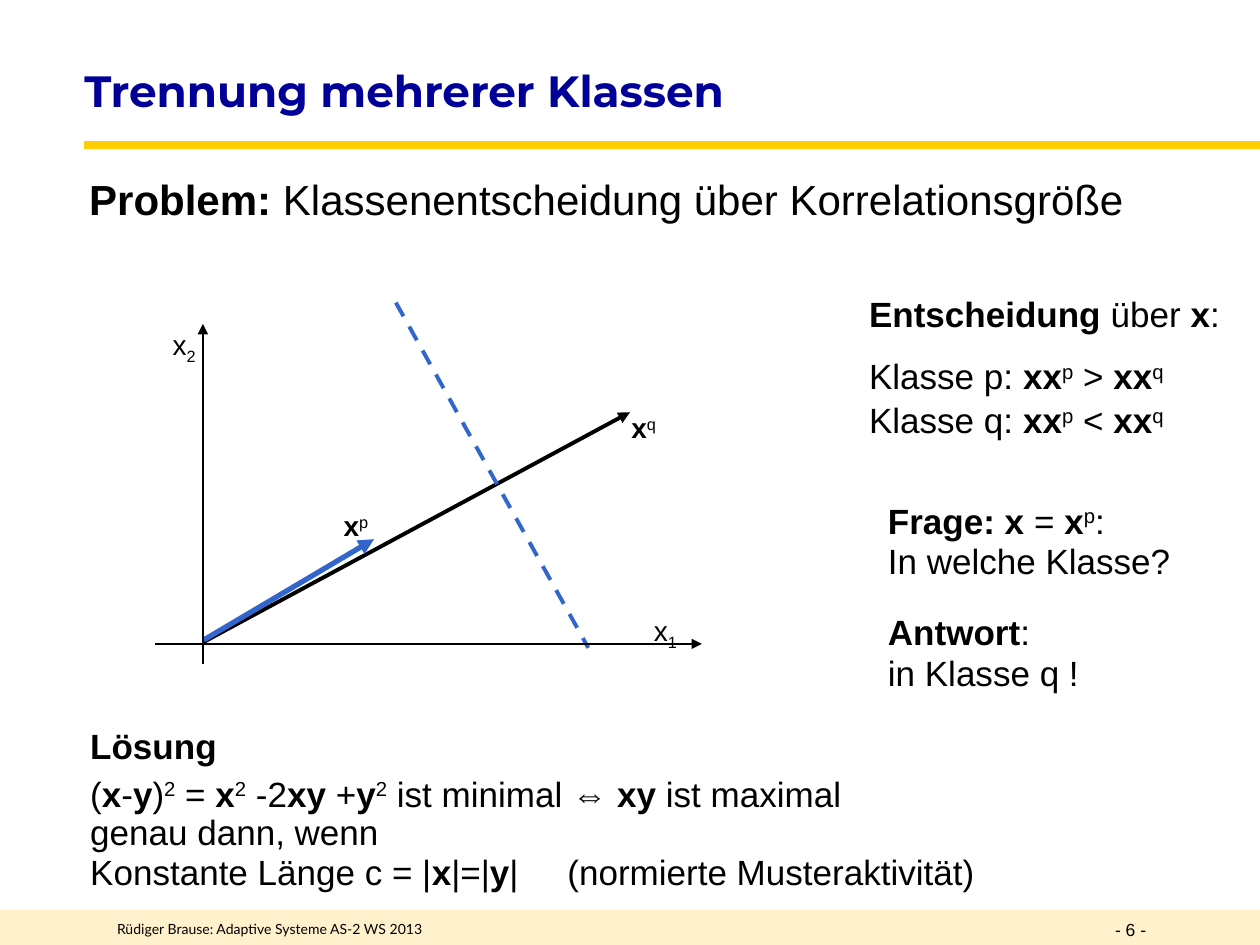
from dataclasses import dataclass

from pptx import Presentation
from pptx import util as u
from pptx.dml.color import RGBColor
from pptx.enum import dml, shapes, text
from pptx.oxml import ns, xmlchemy as xml


@dataclass(frozen=True)
class Theme:
    black: str = "000000"
    navy: str = "000099"
    blue: str = "3366CC"
    gold: str = "FFCC00"
    cream: str = "FFE499"
    sans: str = "Arial"
    head: str = "Montserrat"
    foot: str = "Lato"
    title: int = 25
    lead: int = 24
    body: int = 20
    label: int = 16
    page: int = 10
    note: int = 8


T = Theme()
SHIFT = {"^": "30000", "_": "-25000"}


def color(code):
    return RGBColor.from_string(code)


def child(node, tag, **attrs):
    item = xml.OxmlElement(tag)
    for key, value in attrs.items():
        item.set(key, value)
    node.append(item)
    return item


def split(line):
    bold, shift, part = False, None, ""
    for char in line + "*":
        if char not in "*^_":
            part += char
            continue
        if part:
            yield part, bold, shift
        part = ""
        if char == "*":
            bold = not bold
        else:
            shift = None if shift else SHIFT[char]


def write(slide, lines, box, size=T.body, font=T.sans, ink=T.black,
          pad=(0.25, 0.13), gaps=(), before=11.5, tab=None,
          anchor=text.MSO_ANCHOR.TOP):
    frame = slide.shapes.add_textbox(*map(u.Cm, box)).text_frame
    frame.word_wrap = True
    frame.vertical_anchor = anchor
    frame.margin_left, frame.margin_top = map(u.Cm, pad)
    frame.margin_right, frame.margin_bottom = map(u.Cm, pad)
    for i, line in enumerate(lines):
        para = frame.paragraphs[0] if i == 0 else frame.add_paragraph()
        if i:
            para.space_before = u.Pt(before)
        if gaps:
            para.line_spacing = gaps[i]
        if tab and "\t" in line:
            stops = child(para._p.get_or_add_pPr(), "a:tabLst")
            child(stops, "a:tab", pos=str(u.Cm(tab)), algn="l")
        for part, bold, shift in split(line):
            run = para.add_run()
            run.text = part
            run.font.name, run.font.size = font, u.Pt(size)
            run.font.bold = bold
            run.font.color.rgb = color(ink)
            if shift:
                run._r.get_or_add_rPr().set("baseline", shift)


def draw(slide, start, end, ink=T.black, width=0.75, arrow=False, dash=False):
    line = slide.shapes.add_connector(
        shapes.MSO_CONNECTOR.STRAIGHT, *map(u.Cm, start + end))
    line.line.color.rgb = color(ink)
    line.line.width = u.Pt(width)
    if dash:
        line.line.dash_style = dml.MSO_LINE.DASH
    if arrow:
        child(line.line._get_or_add_ln(), "a:tailEnd", type="triangle")
    child(line._element.spPr, "a:effectLst")


def band(slide, box, ink, alpha):
    bar = slide.shapes.add_shape(
        shapes.MSO_SHAPE.RECTANGLE, *map(u.Cm, box))
    bar.shadow.inherit = False
    bar.fill.solid()
    bar.fill.fore_color.rgb = color(ink)
    bar.line.fill.background()
    tint = bar._element.spPr.find(".//" + ns.qn("a:srgbClr"))
    child(tint, "a:alpha", val=str(alpha * 1000))


def frame(slide):
    band(slide, (0, 18.34, 25.4, 0.71), T.cream, 50)
    draw(slide, (1.7, 2.92), (25.4, 2.92), T.gold, 4.5)
    write(slide, ["Rüdiger Brause: Adaptive Systeme AS-2 WS 2013"],
          (2.11, 18.42, 13.77, 0.64), size=T.note, font=T.foot)
    write(slide, ["- 6 -"], (22.23, 18.39, 1.91, 0.66), size=T.page)
    write(slide, ["*Trennung mehrerer Klassen*"], (1.7, 1.12, 18.39, 1.4),
          size=T.title, font=T.head, ink=T.navy, pad=(0, 0.13),
          anchor=text.MSO_ANCHOR.MIDDLE)


def plot(slide):
    draw(slide, (4.09, 12.95), (12.7, 8.31), width=2.25, arrow=True)
    draw(slide, (4.11, 12.9), (7.54, 10.87), T.blue, 3, arrow=True)
    draw(slide, (7.98, 6.1), (11.86, 13.06), T.blue, 2.25, dash=True)
    draw(slide, (3.12, 12.98), (14.15, 12.98), arrow=True)
    draw(slide, (4.09, 13.39), (4.09, 6.53), arrow=True)
    for name, left, top in (("*x*^p^", 6.93, 10.26), ("*x*^q^", 12.73, 8.28),
                            ("x_2_", 3.48, 6.6), ("x_1_", 13.18, 12.37)):
        write(slide, [name], (left, top, 0.7, 0.71), size=T.label, pad=(0, 0))


def main():
    deck = Presentation()
    deck.slide_width, deck.slide_height = u.Cm(25.4), u.Cm(19.05)
    slide = deck.slides.add_slide(deck.slide_layouts[6])
    frame(slide)
    write(slide, ["*Problem: *Klassenentscheidung über Korrelationsgröße"],
          (1.55, 3.53, 23.37, 1.27), size=T.lead, gaps=(0.85,))
    plot(slide)
    write(slide, ["*Entscheidung* über *x*:",
                  "Klasse p: *xx*^p^ > *xx*^q^",
                  "Klasse q: *xx*^p^ < *xx*^q^"],
          (17.27, 5.77, 7.75, 3.23), gaps=(1, 1, 0.5))
    write(slide, ["*Frage: x* = *x*^p^:", "In welche Klasse?",
                  "*Antwort*:", "in Klasse q !"],
          (17.65, 9.93, 7.01, 4.17), gaps=(1, 0.4, 1.3, 0.4))
    write(slide, ["*Lösung*",
                  "(*x*-*y*)^2^ = *x*^2^ -2*xy* +*y*^2^ ist minimal ⇔ "
                  "*xy *ist maximal",
                  "genau dann, wenn",
                  "Konstante Länge c = |*x*|=|*y*|\t(normierte Musteraktivität)"],
          (1.57, 14.48, 22.17, 3.63), gaps=(1, 0.6, 0.4, 0.5), tab=9.62)
    deck.save("out.pptx")


if __name__ == "__main__":
    main()
